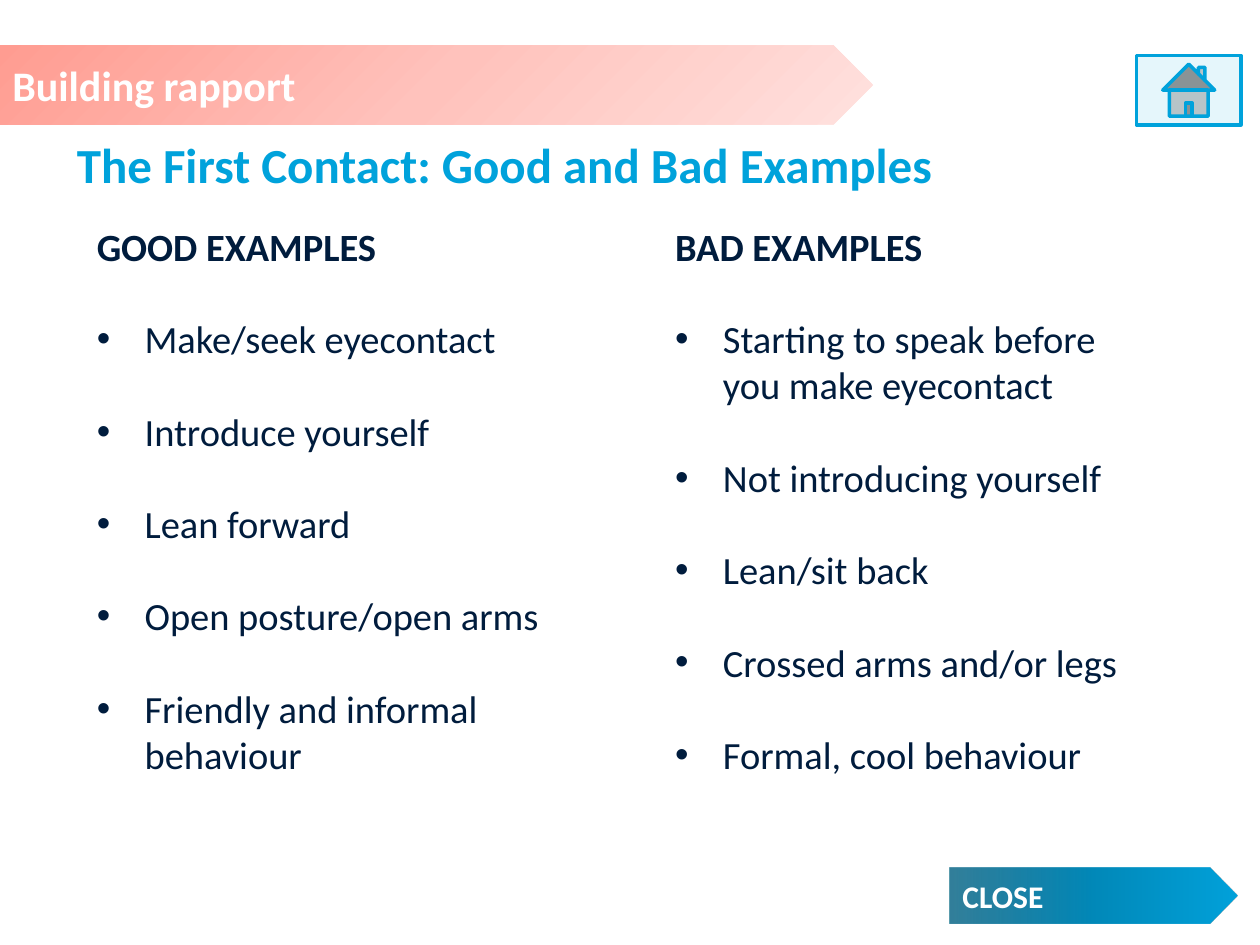
from dataclasses import dataclass

from lxml.etree import SubElement
from pptx import Presentation
from pptx.dml.color import RGBColor
from pptx.enum.shapes import MSO_SHAPE
from pptx.enum.text import MSO_ANCHOR, MSO_AUTO_SIZE, PP_ALIGN
from pptx.oxml import parse_xml
from pptx.oxml.ns import nsdecls, qn
from pptx.util import Inches, Pt

COLORS = {
    "white": "FFFFFF",
    "blue": "00A2DB",
    "pale blue": "E5F6FB",
    "navy": "001C3D",
}
FONT = "Calibri"
LINE_GAP = Pt(26.4)
BULLET_INDENT = Inches(0.38)
RADIAL = ('<a:path path="circle">'
          '<a:fillToRect l="0" t="0" r="100000" b="100000"/></a:path>')
LINEAR = '<a:lin ang="0" scaled="0"/>'


@dataclass
class Stop:
    position: int
    color: str
    opacity: int = 100


@dataclass
class Banner:
    text: str
    box: tuple[float, float, float, float]
    size: int
    stops: list[Stop]
    direction: str


@dataclass
class ExampleColumn:
    heading: str
    box: tuple[float, float, float, float]
    examples: list[str]


BANNERS = [
    Banner("Building rapport", (0, 0.36, 6.93, 0.63), 24,
           [Stop(0, "FF9C91"), Stop(50, "FFC2BC"), Stop(100, "FFE1DE")], RADIAL),
    Banner("CLOSE", (7.54, 6.89, 2.28, 0.44), 18,
           [Stop(0, "006082", 80), Stop(50, "0089B9"), Stop(100, "00A2DB")], LINEAR),
]
COLUMNS = [
    ExampleColumn("GOOD EXAMPLES", (0.67, 1.72, 4, 4.91), [
        "Make/seek eyecontact",
        "Introduce yourself",
        "Lean forward",
        "Open posture/open arms",
        "Friendly and informal behaviour",
    ]),
    ExampleColumn("BAD EXAMPLES", (5.26, 1.72, 4, 4.54), [
        "Starting to speak before you make eyecontact",
        "Not introducing yourself",
        "Lean/sit back",
        "Crossed arms and/or legs",
        "Formal, cool behaviour",
    ]),
]


def to_inches(box: tuple) -> list:
    return [Inches(value) for value in box]


def write(paragraph, text: str, size: int, color: str, bold: bool = True) -> None:
    paragraph.alignment = PP_ALIGN.LEFT
    run = paragraph.add_run()
    run.text = text
    for name, value in {"name": FONT, "size": Pt(size), "bold": bold}.items():
        setattr(run.font, name, value)
    run.font.color.rgb = RGBColor.from_string(COLORS[color])


def format_frame(frame, anchor) -> None:
    settings = {"word_wrap": True, "auto_size": MSO_AUTO_SIZE.NONE,
                "vertical_anchor": anchor}
    for name, value in settings.items():
        setattr(frame, name, value)


def fill_gradient(shape, stops: list[Stop], direction: str) -> None:
    shape.fill.gradient()
    stop_xml = "".join(
        f'<a:gs pos="{stop.position * 1000}"><a:srgbClr val="{stop.color}">'
        f'<a:alpha val="{stop.opacity * 1000}"/></a:srgbClr></a:gs>'
        for stop in stops)
    gradient = parse_xml(f'<a:gradFill {nsdecls("a")} rotWithShape="1">'
                         f'<a:gsLst>{stop_xml}</a:gsLst>{direction}</a:gradFill>')
    properties = shape._element.spPr
    properties.replace(properties.find(qn("a:gradFill")), gradient)


def add_banner(slide, banner: Banner) -> None:
    shape = slide.shapes.add_shape(MSO_SHAPE.PENTAGON, *to_inches(banner.box))
    shape.shadow.inherit = False
    shape.line.fill.background()
    fill_gradient(shape, banner.stops, banner.direction)
    format_frame(shape.text_frame, MSO_ANCHOR.MIDDLE)
    write(shape.text_frame.paragraphs[0], banner.text, banner.size, "white")


def add_home_button(slide) -> None:
    button = slide.shapes.add_shape(MSO_SHAPE.ACTION_BUTTON_HOME,
                                    *to_inches((9.02, 0.44, 0.83, 0.55)))
    button.shadow.inherit = False
    button.fill.solid()
    button.fill.fore_color.rgb = RGBColor.from_string(COLORS["pale blue"])
    button.line.color.rgb = RGBColor.from_string(COLORS["blue"])
    button.line.width = Pt(2)


def place_title(slide, text: str) -> None:
    title = slide.shapes.title
    title.left, title.top, title.width, title.height = to_inches((0.51, 1.02, 9.45, 0.57))
    format_frame(title.text_frame, MSO_ANCHOR.TOP)
    write(title.text_frame.paragraphs[0], text, 28, "blue")


def add_bullet(paragraph) -> None:
    properties = paragraph._p.get_or_add_pPr()
    properties.set("marL", str(BULLET_INDENT))
    properties.set("indent", str(-BULLET_INDENT))
    SubElement(properties, qn("a:buFont"), typeface="Arial")
    SubElement(properties, qn("a:buChar"), char="•")


def add_example_column(slide, column: ExampleColumn) -> None:
    frame = slide.shapes.add_textbox(*to_inches(column.box)).text_frame
    format_frame(frame, MSO_ANCHOR.TOP)
    write(frame.paragraphs[0], column.heading, 22, "navy")
    for example in column.examples:
        paragraph = frame.add_paragraph()
        paragraph.space_before = LINE_GAP
        add_bullet(paragraph)
        write(paragraph, example, 22, "navy", bold=False)


def main() -> None:
    presentation = Presentation()
    presentation.slide_width = Inches(10)
    presentation.slide_height = Inches(7.5)
    slide = presentation.slides.add_slide(presentation.slide_layouts[5])
    place_title(slide, "The First Contact: Good and Bad Examples")
    for banner in BANNERS:
        add_banner(slide, banner)
    add_home_button(slide)
    for column in COLUMNS:
        add_example_column(slide, column)
    presentation.save("out.pptx")


if __name__ == "__main__":
    main()
